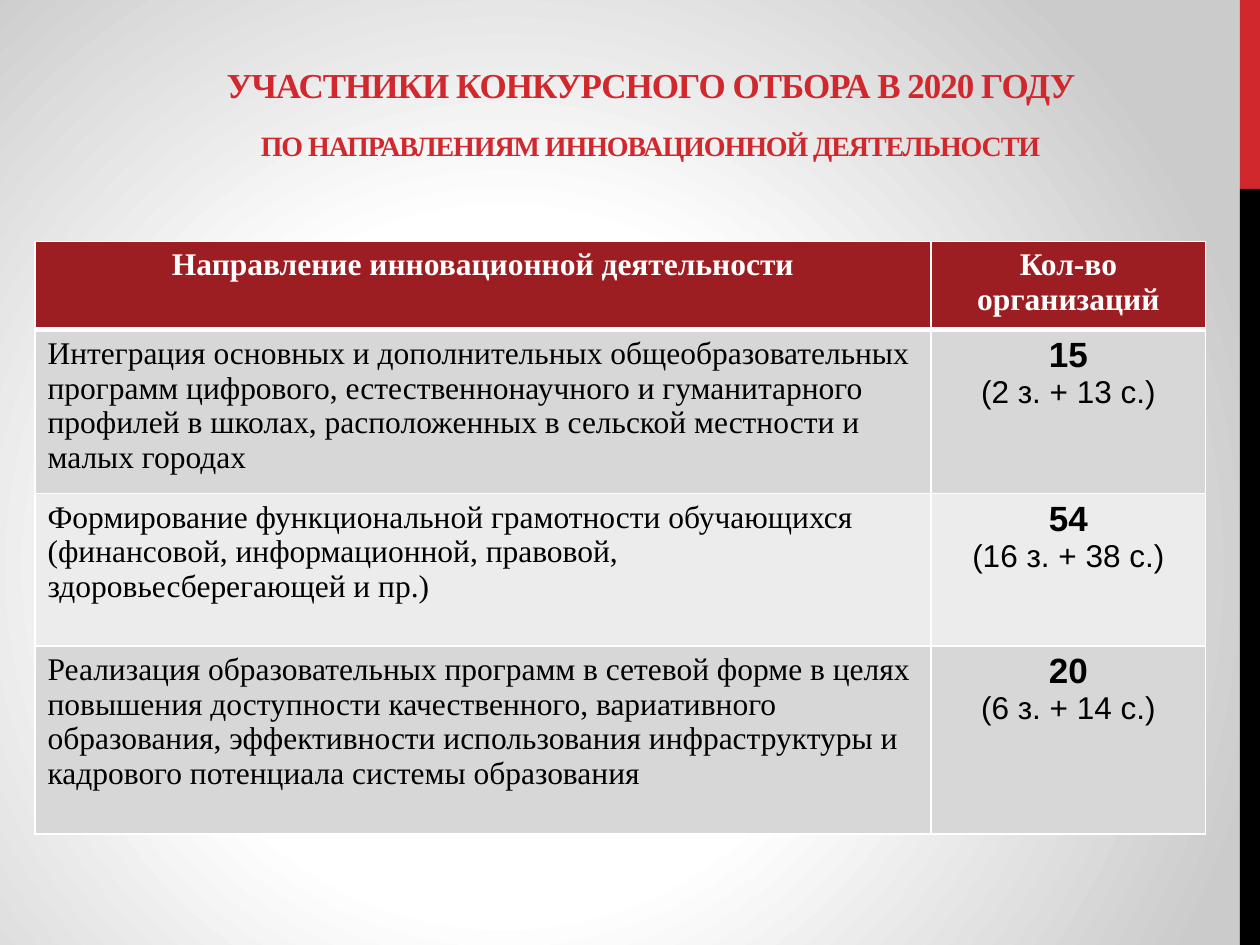
import pptx
import pptx.dml.color
import pptx.enum.shapes
import pptx.enum.text
import pptx.oxml
import pptx.oxml.ns
import pptx.util

Pt = pptx.util.Pt
CENTER = pptx.enum.text.PP_ALIGN.CENTER
LEFT = pptx.enum.text.PP_ALIGN.LEFT
SERIF, SANS = "Times New Roman", "Arial"
RED, DARK_RED, WHITE, BLACK = "D1282E", "9D1E22", "FFFFFF", "000000"
HEADERS = ("Направление инновационной деятельности", "Кол-во организаций")
DIRECTIONS = (
    ("Интеграция основных и дополнительных общеобразовательных программ цифрового, "
     "естественнонаучного и гуманитарного профилей в школах, расположенных в сельской "
     "местности и малых городах", "15", "(2 з. + 13 с.)"),
    ("Формирование функциональной грамотности обучающихся (финансовой, информационной, "
     "правовой, здоровьесберегающей и пр.)", "54", "(16 з. + 38 с.)"),
    ("Реализация образовательных программ в сетевой форме в целях повышения доступности "
     "качественного, вариативного образования, эффективности использования "
     "инфраструктуры и кадрового потенциала системы образования", "20", "(6 з. + 14 с.)"),
)


def color(value):
    """Return the colour for a hex string."""
    return pptx.dml.color.RGBColor.from_string(value)


def write(paragraph, text, size, ink, font=SERIF, bold=False, align=CENTER):
    """Put styled text into a paragraph."""
    paragraph.text = text
    paragraph.alignment = align
    paragraph.font.name = font
    paragraph.font.size = Pt(size)
    paragraph.font.bold = bold
    paragraph.font.color.rgb = color(ink)


def paint_background(slide):
    """Fill the slide with a radial gradient from white to grey."""
    slide.background.fill.gradient()
    gradient = slide.element.find(".//" + pptx.oxml.ns.qn("a:gradFill"))
    stops = "".join(
        f'<a:gs pos="{position}000"><a:srgbClr val="{value}"/></a:gs>'
        for position, value in ((0, WHITE), (44, WHITE), (100, "CBCBCB")))
    radial = pptx.oxml.parse_xml(
        f'<a:gradFill {pptx.oxml.ns.nsdecls("a")} rotWithShape="1"><a:gsLst>{stops}</a:gsLst>'
        '<a:path path="circle"><a:fillToRect l="40000" t="60000" r="60000" b="40000"/>'
        '</a:path></a:gradFill>')
    gradient.getparent().replace(gradient, radial)


def add_side_bar(slide, left, top, width, height):
    """Draw the side bar: a red fifth above a black remainder."""
    red_height = height / 5
    for offset, part, fill in ((0, red_height, RED), (red_height, height - red_height, BLACK)):
        bar = slide.shapes.add_shape(
            pptx.enum.shapes.MSO_SHAPE.RECTANGLE,
            Pt(left), Pt(top + offset), Pt(width), Pt(part))
        bar.shadow.inherit = False
        bar.fill.solid()
        bar.fill.fore_color.rgb = color(fill)
        bar.line.fill.background()


def add_title(slide, left, top, width, height):
    """Write the two-line heading."""
    frame = slide.shapes.add_textbox(Pt(left), Pt(top), Pt(width), Pt(height)).text_frame
    frame.word_wrap = True
    frame.margin_top = Pt(10.5)
    heading, subheading = frame.paragraphs[0], frame.add_paragraph()
    write(heading, "УЧАСТНИКИ КОНКУРСНОГО ОТБОРА В 2020 ГОДУ", 20, RED, bold=True)
    write(subheading, "ПО НАПРАВЛЕНИЯМ ИННОВАЦИОННОЙ ДЕЯТЕЛЬНОСТИ", 16, RED, bold=True)
    subheading.space_before = Pt(13)
    for paragraph in frame.paragraphs:
        paragraph.runs[0].font._element.set("spc", "-60")


def style_cell(cell, fill, top_width, bottom_width):
    """Give a cell white borders and a solid fill."""
    properties = cell._tc.get_or_add_tcPr()
    for side, width in (("L", 1), ("R", 1), ("T", top_width), ("B", bottom_width)):
        properties.append(pptx.oxml.parse_xml(
            f'<a:ln{side} {pptx.oxml.ns.nsdecls("a")} w="{Pt(width)}"><a:solidFill>'
            f'<a:srgbClr val="{WHITE}"/></a:solidFill></a:ln{side}>'))
    cell.fill.solid()
    cell.fill.fore_color.rgb = color(fill)


def add_directions_table(slide, left, top, column_widths, row_heights):
    """Build the table of directions and numbers of organisations."""
    table = slide.shapes.add_table(
        len(row_heights), len(column_widths), Pt(left), Pt(top),
        Pt(sum(column_widths)), Pt(sum(row_heights))).table
    for column, width in zip(table.columns, column_widths):
        column.width = Pt(width)
    for row, height in zip(table.rows, row_heights):
        row.height = Pt(height)
    for cell, text in zip(table.rows[0].cells, HEADERS):
        style_cell(cell, DARK_RED, 1, 3)
        write(cell.text_frame.paragraphs[0], text, 18, WHITE, bold=True)
    for index, (direction, total, split) in enumerate(DIRECTIONS, 1):
        name_cell, count_cell = table.rows[index].cells
        for cell in (name_cell, count_cell):
            style_cell(cell, "D7D7D7" if index % 2 else "ECECEC", 3 if index == 1 else 1, 1)
        write(name_cell.text_frame.paragraphs[0], direction, 18, BLACK, align=LEFT)
        write(count_cell.text_frame.paragraphs[0], total, 20, BLACK, SANS, bold=True)
        write(count_cell.text_frame.add_paragraph(), split, 18, BLACK, SANS)


def main():
    """Build and save the presentation."""
    presentation = pptx.Presentation()
    presentation.slide_width, presentation.slide_height = Pt(720), Pt(540)
    slide = presentation.slides.add_slide(presentation.slide_layouts[6])
    paint_background(slide)
    add_side_bar(slide, 708.5, 0, 11.5, 540)
    add_title(slide, 95, 26, 553.7, 79)
    add_directions_table(slide, 20, 138, (512, 157), (47, 87, 87, 107.5))
    presentation.save("out.pptx")


if __name__ == "__main__":
    main()
